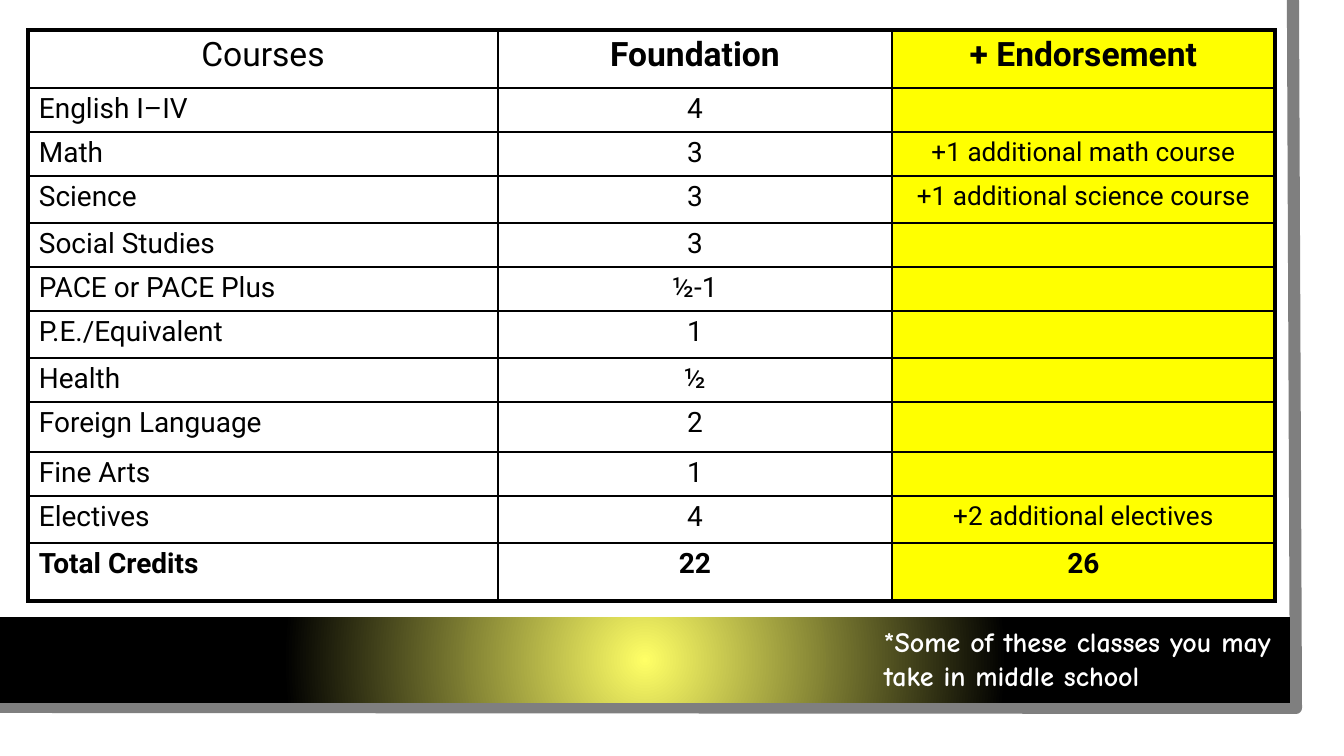
from lxml import etree
from pptx import Presentation
from pptx import util as u
from pptx.dml.color import RGBColor
from pptx.enum import shapes, text
from pptx.oxml import parse_xml
from pptx.oxml.ns import nsdecls, qn

SCALE = 914400 / 134.4
COLORS = {
    "black": "000000",
    "white": "FFFFFF",
    "shade": "7F7F7F",
    "glow": "FFFF66",
    "highlight": "FFFF00",
}
COLUMN_WIDTHS = [470, 394, 383]
# Course, foundation credits, endorsement credits, row height
ROWS = [
    ("Courses", "Foundation", "+ Endorsement", 58),
    ("English I–IV", "4", "", 44),
    ("Math", "3", "+1 additional math course", 44),
    ("Science", "3", "+1 additional science course", 47),
    ("Social Studies", "3", "", 44),
    ("PACE or PACE Plus", "½-1", "", 44),
    ("P.E./Equivalent", "1", "", 47),
    ("Health", "½", "", 44),
    ("Foreign Language", "2", "", 50),
    ("Fine Arts", "1", "", 44),
    ("Electives", "4", "+2 additional electives", 47),
    ("Total Credits", "22", "26", 58),
]
LAST_ROW = len(ROWS) - 1
LAST_COLUMN = len(COLUMN_WIDTHS) - 1


def px(value):
    return u.Emu(round(value * SCALE))


def color(name):
    return RGBColor.from_string(COLORS[name])


def format_run(run, font_name, size, color_name, bold):
    font = run.font
    font.name = font_name
    font.size = u.Pt(size)
    font.bold = bold
    font.color.rgb = color(color_name)


def set_margins(target, horizontal, vertical):
    target.margin_left = target.margin_right = px(horizontal)
    target.margin_top = target.margin_bottom = px(vertical)


def add_edge(slide):
    """Draw the grey line down the right side and along the bottom."""
    builder = slide.shapes.build_freeform(px(1293), px(0))
    builder.add_line_segments([(px(1296), px(708)), (px(-3), px(707))], close=False)
    edge = builder.convert_to_shape()
    edge.shadow.inherit = False
    edge.fill.background()
    edge.line.color.rgb = color("shade")
    edge.line.width = u.Pt(6.5)


def add_band(slide):
    """Draw the black band with a round glow in its middle."""
    band = slide.shapes.add_shape(
        shapes.MSO_SHAPE.RECTANGLE, px(0), px(617), px(1290), px(86))
    band.shadow.inherit = False
    band.line.fill.background()
    band.fill.background()
    stops = "".join(
        f'<a:gs pos="{position * 1000}"><a:srgbClr val="{COLORS[name]}"/></a:gs>'
        for position, name in [(0, "glow"), (56, "black"), (100, "black")])
    gradient = parse_xml(
        f'<a:gradFill {nsdecls("a")}><a:gsLst>{stops}</a:gsLst>'
        '<a:path path="circle">'
        '<a:fillToRect l="50000" t="50000" r="50000" b="50000"/>'
        '</a:path></a:gradFill>')
    properties = band.element.spPr
    properties.replace(properties.find(qn("a:noFill")), gradient)


def set_borders(cell, row, column):
    """Thick lines around the table, thin lines inside it."""
    outer_sides = {
        "L": column == 0,
        "R": column == LAST_COLUMN,
        "T": row == 0,
        "B": row == LAST_ROW,
    }
    properties = cell._tc.get_or_add_tcPr()
    for side, is_outer in outer_sides.items():
        width = u.Pt(2.25 if is_outer else 1)
        properties.append(parse_xml(
            f'<a:ln{side} {nsdecls("a")} w="{width}"><a:solidFill>'
            f'<a:srgbClr val="{COLORS["black"]}"/></a:solidFill></a:ln{side}>'))


def font_size(row, column):
    if row == 0:
        return 18
    return 14 if column == LAST_COLUMN and row < LAST_ROW else 15


def fill_cell(cell, row, column, wording):
    set_margins(cell, 11, 5)
    set_borders(cell, row, column)
    if column == LAST_COLUMN:
        cell.fill.solid()
        cell.fill.fore_color.rgb = color("highlight")
    else:
        cell.fill.background()

    size = font_size(row, column)
    paragraph = cell.text_frame.paragraphs[0]
    if not wording:
        etree.SubElement(paragraph._p, qn("a:endParaRPr"), sz=str(size * 100))
        return
    paragraph.text = wording
    if row == 0 or column > 0:
        paragraph.alignment = text.PP_ALIGN.CENTER
    bold = row == LAST_ROW or (row == 0 and column > 0)
    format_run(paragraph.runs[0], "Roboto", size, "black", bold)


def add_credit_table(slide):
    heights = [height for *_, height in ROWS]
    table = slide.shapes.add_table(
        len(ROWS), len(COLUMN_WIDTHS), px(28), px(30),
        px(sum(COLUMN_WIDTHS)), px(sum(heights))).table
    table.first_row = False
    table.horz_banding = False
    for column, width in zip(table.columns, COLUMN_WIDTHS):
        column.width = px(width)
    for row, (*wordings, height) in enumerate(ROWS):
        table.rows[row].height = px(height)
        for column, wording in enumerate(wordings):
            fill_cell(table.cell(row, column), row, column, wording)


def add_note(slide):
    note = slide.shapes.add_textbox(px(875), px(620), px(415), px(78))
    frame = note.text_frame
    frame.word_wrap = True
    set_margins(frame, 9, 5)
    frame.text = "*Some of these classes you may take in middle school"
    format_run(frame.paragraphs[0].runs[0], "Comic Neue", 15, "white", True)


def main():
    presentation = Presentation()
    presentation.slide_width = px(1344)
    presentation.slide_height = px(756)
    slide = presentation.slides.add_slide(presentation.slide_layouts[6])
    add_edge(slide)
    add_band(slide)
    add_credit_table(slide)
    add_note(slide)
    presentation.save("out.pptx")


if __name__ == "__main__":
    main()
